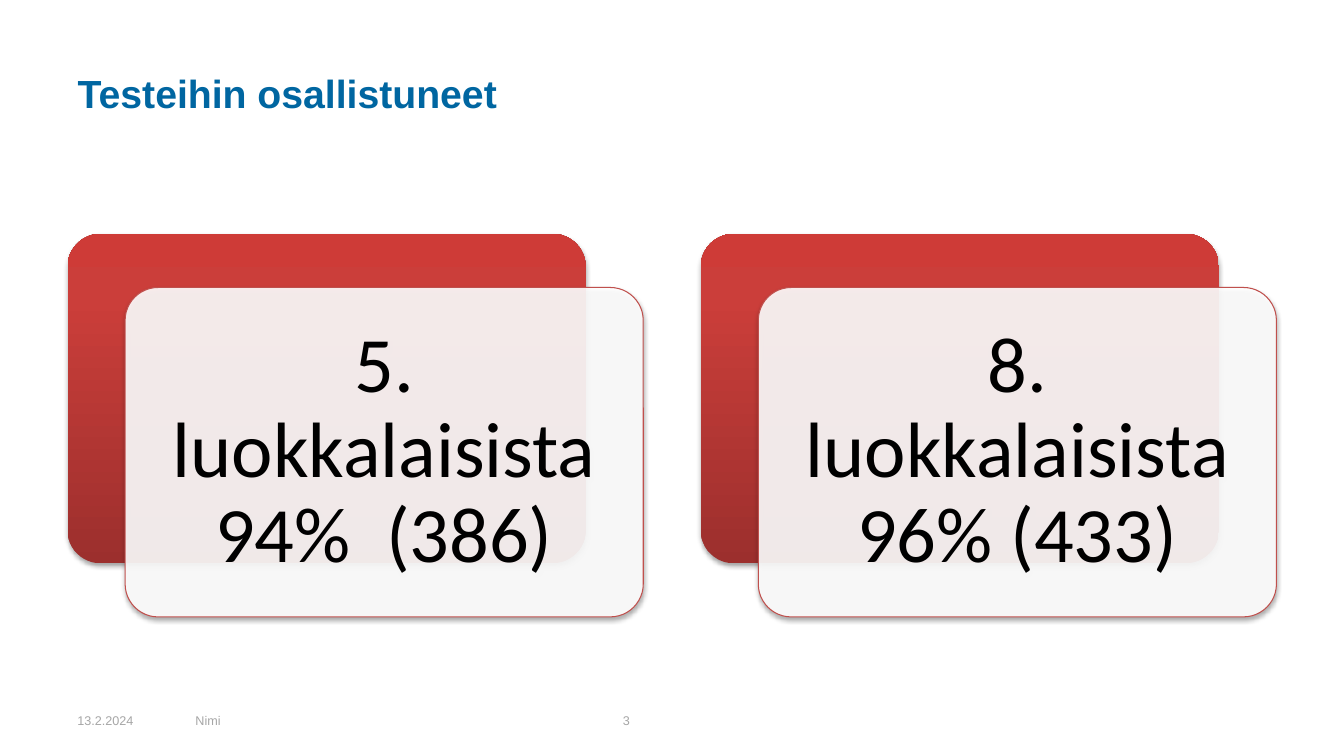
from dataclasses import dataclass

from lxml import etree
from pptx import Presentation
from pptx.dml.color import RGBColor
from pptx.enum.shapes import MSO_SHAPE
from pptx.enum.text import MSO_ANCHOR, PP_ALIGN
from pptx.oxml import parse_xml
from pptx.oxml.ns import qn
from pptx.util import Inches, Pt

ROUNDED = MSO_SHAPE.ROUNDED_RECTANGLE
MIDDLE = MSO_ANCHOR.MIDDLE
LEFT, CENTER = PP_ALIGN.LEFT, PP_ALIGN.CENTER
A_NS = "http://schemas.openxmlformats.org/drawingml/2006/main"


@dataclass(frozen=True)
class Theme:
    title: str = "0066A1"
    footer: str = "A6A6A6"
    text: str = "000000"
    panel: str = "FFFFFF"
    outline: str = "C0504D"
    gradient: tuple = ((0, "9C2F2D"), (80, "CB3E3A"), (100, "CE3B37"))
    heading_font: str = "Arial"
    card_font: str = "Calibri"
    title_size: int = 28
    footer_size: int = 9
    card_size: int = 56


THEME = Theme()
WIDTH, HEIGHT = 13.33, 7.5
MARGIN = 0.67
CARDS = ("5. luokkalaisista 94%  (386)", "8. luokkalaisista 96% (433)")
CARD_BOX = (MARGIN, 2.32, WIDTH - 2 * MARGIN, 3.8)
CARD_GAP = 0.57
PANEL_SHARE = (0.9, 0.86)  # panel size as a share of its card
FOOTERS = (("13.2.2024", 1.17), ("Nimi", 4.24), ("3", 3.11))


def write(shape, text, align, inset, **font):
    """Fill a shape with one vertically centred paragraph."""
    tf = shape.text_frame
    tf.word_wrap = True
    tf.vertical_anchor = MIDDLE
    for side, value in zip(("left", "top", "right", "bottom"), inset):
        setattr(tf, f"margin_{side}", Inches(value))
    p = tf.paragraphs[0]
    p.alignment = align
    r = p.add_run()
    r.text = text
    color = font.pop("color")
    for name, value in font.items():
        setattr(r.font, name, value)
    r.font.color.rgb = RGBColor.from_string(color)
    return p


def add_title(s, text, box):
    title = s.shapes.title
    title.left, title.top, title.width, title.height = map(Inches, box)
    write(title, text, LEFT, (0.1, 0.05, 0.1, 0.05), name=THEME.heading_font,
          size=Pt(THEME.title_size), bold=True, color=THEME.title)


def add_footer(s, x, y, height):
    for text, width in FOOTERS:
        sp = s.shapes.add_textbox(*map(Inches, (x, y, width, height)))
        write(sp, text, LEFT, (0.1, 0.05, 0.1, 0.05), name=THEME.heading_font,
              size=Pt(THEME.footer_size), color=THEME.footer)
        x += width


def add_shadow(sp):
    sp.shadow.inherit = False
    effects = sp._element.spPr.find(qn("a:effectLst"))
    effects.append(parse_xml(
        f'<a:outerShdw xmlns:a="{A_NS}" blurRad="{Pt(3.1)}" dist="{Pt(1.8)}" '
        'dir="5400000" rotWithShape="0"><a:srgbClr val="000000">'
        '<a:alpha val="35000"/></a:srgbClr></a:outerShdw>'))


def add_panel(s, box):
    sp = s.shapes.add_shape(ROUNDED, *map(Inches, box))
    sp.adjustments[0] = 0.1
    add_shadow(sp)
    return sp


def fill_gradient(sp):
    sp.fill.gradient()
    gradient = sp._element.spPr.find(qn("a:gradFill"))
    stops = "".join(f'<a:gs pos="{pos * 1000}"><a:srgbClr val="{color}"/></a:gs>'
                    for pos, color in THEME.gradient)
    gradient.getparent().replace(gradient, parse_xml(
        f'<a:gradFill xmlns:a="{A_NS}" rotWithShape="1"><a:gsLst>{stops}</a:gsLst>'
        '<a:lin ang="16200000" scaled="0"/></a:gradFill>'))


def add_card(s, text, x, y, width, height):
    """Red panel at the top left, translucent text panel at the bottom right."""
    w, h = width * PANEL_SHARE[0], height * PANEL_SHARE[1]

    back = add_panel(s, (x, y, w, h))
    fill_gradient(back)
    back.line.fill.background()

    front = add_panel(s, (x + width - w, y + height - h, w, h))
    front.fill.solid()
    front.fill.fore_color.rgb = RGBColor.from_string(THEME.panel)
    color = front._element.spPr.find(qn("a:solidFill"))[0]
    etree.SubElement(color, qn("a:alpha"), val="90000")
    front.line.color.rgb = RGBColor.from_string(THEME.outline)
    front.line.width = Pt(0.75)
    p = write(front, text, CENTER, (0.23,) * 4, name=THEME.card_font,
              size=Pt(THEME.card_size), color=THEME.text)
    p.line_spacing = 0.9


def add_cards(s, x, y, width, height):
    card_width = (width - CARD_GAP * (len(CARDS) - 1)) / len(CARDS)
    for i, text in enumerate(CARDS):
        add_card(s, text, x + i * (card_width + CARD_GAP), y, card_width, height)


def main():
    prs = Presentation()
    prs.slide_width, prs.slide_height = Inches(WIDTH), Inches(HEIGHT)
    s = prs.slides.add_slide(prs.slide_layouts[5])
    add_title(s, "Testeihin osallistuneet", (MARGIN, 0.3, WIDTH - 2 * MARGIN, 1.25))
    add_cards(s, *CARD_BOX)
    add_footer(s, MARGIN, 6.95, 0.4)
    prs.save("out.pptx")


if __name__ == "__main__":
    main()
